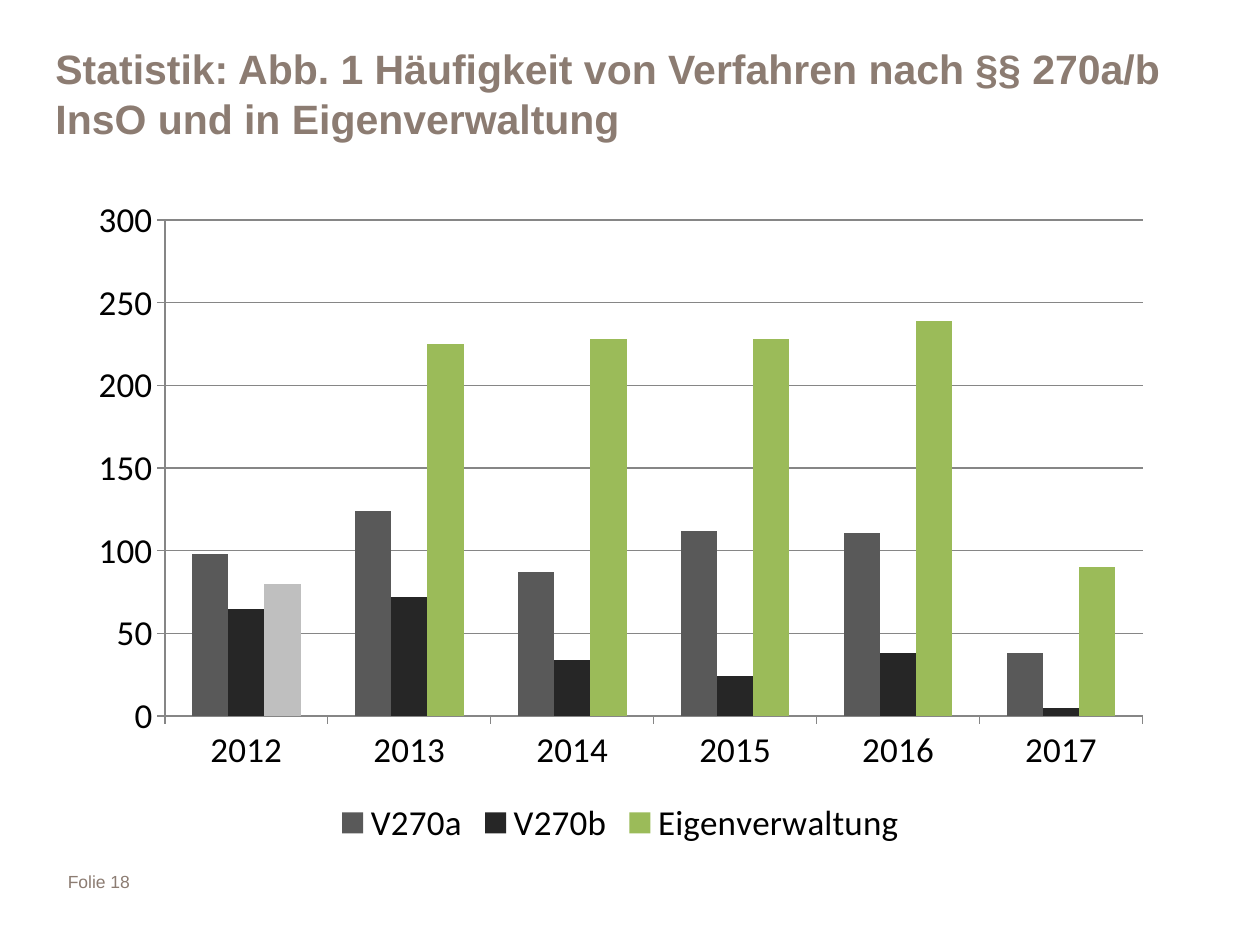
"""Build the slide on the frequency of insolvency proceedings, 2012 to 2017."""
from pptx import Presentation
from pptx.chart.data import CategoryChartData
from pptx.dml.color import RGBColor
from pptx.enum.chart import XL_CHART_TYPE, XL_LEGEND_POSITION, XL_TICK_MARK
from pptx.enum.text import MSO_ANCHOR
from pptx.util import Pt

CLUSTERED = XL_CHART_TYPE.COLUMN_CLUSTERED
BOTTOM = XL_LEGEND_POSITION.BOTTOM
OUTSIDE = XL_TICK_MARK.OUTSIDE
TOP, MIDDLE = MSO_ANCHOR.TOP, MSO_ANCHOR.MIDDLE

COLORS = {
    "taupe": "8C7C72",
    "black": "000000",
    "axis": "868686",
    "V270a": "595959",
    "V270b": "262626",
    "Eigenverwaltung": "9BBB59",
    "first_year": "BFBFBF",
}
YEARS = ["2012", "2013", "2014", "2015", "2016", "2017"]
PROCEEDINGS = {
    "V270a": [98, 124, 87, 112, 111, 38],
    "V270b": [65, 72, 34, 24, 38, 5],
    "Eigenverwaltung": [80, 225, 228, 228, 239, 90],
}
TITLE = "Statistik: Abb. 1 Häufigkeit von Verfahren nach §§ 270a/b InsO und in Eigenverwaltung"


def rgb(name):
    return RGBColor.from_string(COLORS[name])


def add_text(slide, text, box, size, bold, anchor, side_margin):
    shape = slide.shapes.add_textbox(*map(Pt, box))
    frame = shape.text_frame
    frame.word_wrap = True
    frame.vertical_anchor = anchor
    frame.margin_left = frame.margin_right = Pt(side_margin)
    paragraph = frame.paragraphs[0]
    paragraph.text = text
    paragraph.font.name = "Arial"
    paragraph.font.size = Pt(size)
    paragraph.font.bold = bold
    paragraph.font.color.rgb = rgb("taupe")


presentation = Presentation()
presentation.slide_width = Pt(720)
presentation.slide_height = Pt(540)
slide = presentation.slides.add_slide(presentation.slide_layouts[6])

add_text(slide, "Folie 18", (31.7, 493.9, 179.3, 25.9), 10, False, TOP, 7.2)
add_text(slide, TITLE, (31.7, 19.4, 652.3, 67.7), 23.4, True, MIDDLE, 0)

chart_data = CategoryChartData()
chart_data.categories = YEARS
for name, values in PROCEEDINGS.items():
    chart_data.add_series(name, values)

chart = slide.shapes.add_chart(
    CLUSTERED, Pt(43.9), Pt(105.8), Pt(621.4), Pt(380.9), chart_data
).chart
chart.has_title = False
chart.font.name = "Calibri"
chart.font.size = Pt(20)
chart.font.color.rgb = rgb("black")
chart.has_legend = True
chart.legend.position = BOTTOM
chart.legend.include_in_layout = False

for axis in (chart.category_axis, chart.value_axis):
    axis.major_tick_mark = OUTSIDE
    axis.format.line.color.rgb = rgb("axis")
    axis.format.line.width = Pt(0.75)

value_axis = chart.value_axis
value_axis.minimum_scale = 0
value_axis.maximum_scale = 300
value_axis.major_unit = 50
value_axis.has_major_gridlines = True
value_axis.major_gridlines.format.line.color.rgb = rgb("axis")
value_axis.major_gridlines.format.line.width = Pt(0.75)

plot = chart.plots[0]
plot.gap_width = 150
plot.overlap = 0
plot.vary_by_categories = False
for series in plot.series:
    series.format.fill.solid()
    series.format.fill.fore_color.rgb = rgb(series.name)

first_column = plot.series[-1].points[0].format.fill
first_column.solid()
first_column.fore_color.rgb = rgb("first_year")

presentation.save("out.pptx")
